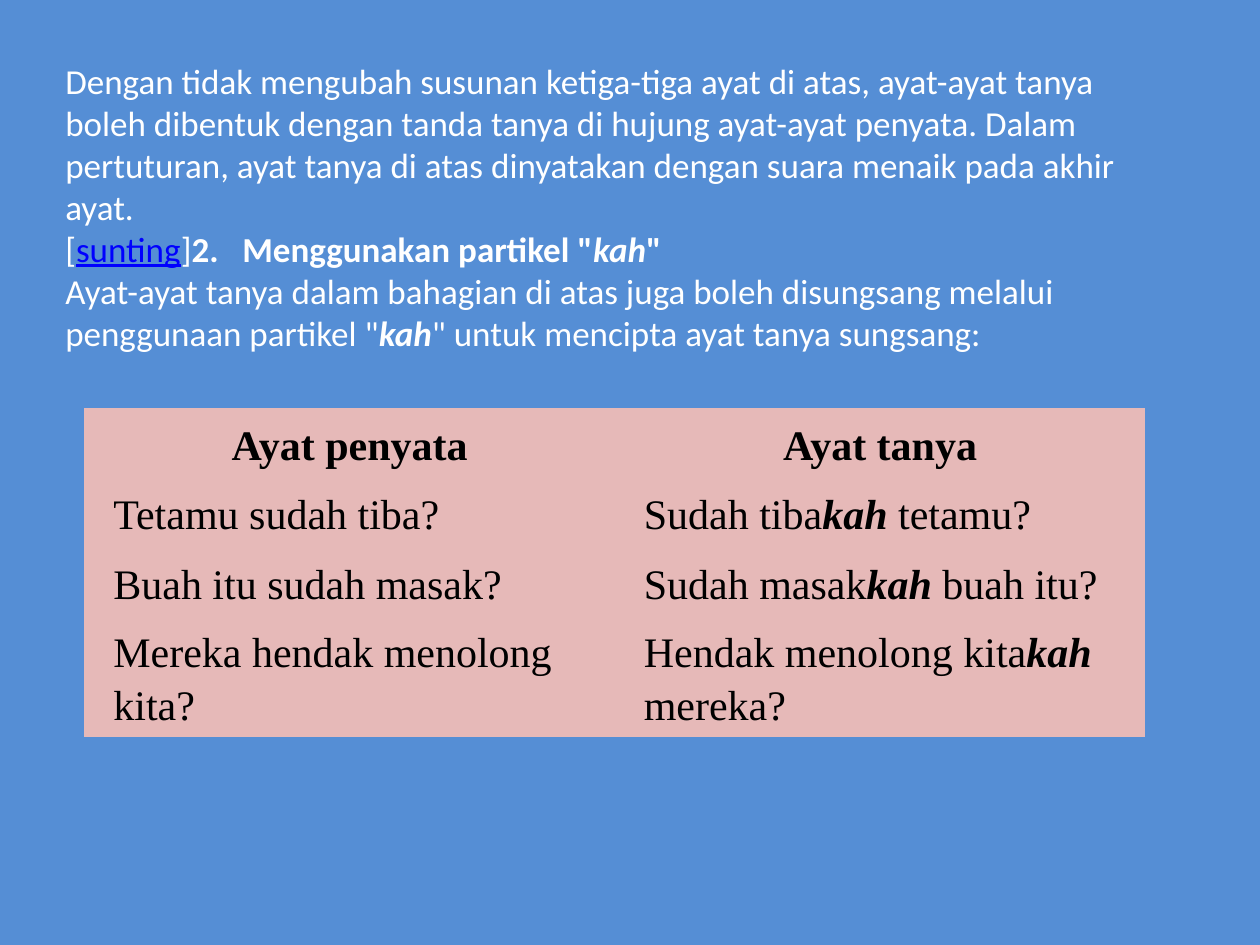
import pptx
import pptx.dml.color
import pptx.enum.text
import pptx.oxml.ns
import pptx.util

Inches = pptx.util.Inches
ALIGN = pptx.enum.text.PP_ALIGN

THEME = {
    "background": "558ED5",
    "body": {"font": "Calibri", "size": 20, "color": "FFFFFF"},
    "table": {"font": "Times New Roman", "size": 24, "color": "000000"},
    "link": "0000FF",
    "cell": "E6B9B8",
    "plain_table_style": "{2D5ABB26-0587-4C30-8999-92F81FD0307C}",
}

EXPLANATION = [
    [("Dengan tidak mengubah susunan ketiga-tiga ayat di atas, ayat-ayat tanya boleh dibentuk "
      "dengan tanda tanya di hujung ayat-ayat penyata. Dalam pertuturan, ayat tanya di atas "
      "dinyatakan dengan suara menaik pada akhir ayat.", "")],
    [("[", ""), ("sunting", "link"), ("]", ""),
     ("2.   Menggunakan partikel \"", "bold"), ("kah", "bold italic"), ("\"", "bold")],
    [("Ayat-ayat tanya dalam bahagian di atas juga boleh disungsang melalui penggunaan partikel \"", ""),
     ("kah", "bold italic"), ("\" untuk mencipta ayat tanya sungsang:", "")],
]

HEADINGS = ["Ayat penyata", "Ayat tanya"]
SENTENCES = [
    ("Tetamu sudah tiba?", "Sudah tiba", "tetamu?"),
    ("Buah itu sudah masak?", "Sudah masak", "buah itu?"),
    ("Mereka hendak menolong kita?", "Hendak menolong kita", "mereka?"),
]
PARTICLE = ("kah ", "bold italic")

TEXT_BOX = (0.42, 0.42, 8.83, 2.46)
TABLE_LEFT, TABLE_TOP = 0.67, 3.24
COLUMN_WIDTH, ROW_HEIGHT = 4.21, 0.55
HEADING_MARGINS = [(0.17, 0.02), (0.01, 0.01)]
SENTENCE_MARGINS = (0.23, 0.02)


def rgb(value):
    return pptx.dml.color.RGBColor.from_string(value)


def add_runs(paragraph, runs, style):
    for text, emphasis in runs:
        run = paragraph.add_run()
        run.text = text
        font = run.font
        font.name = style["font"]
        font.size = pptx.util.Pt(style["size"])
        font.bold = "bold" in emphasis
        font.italic = "italic" in emphasis
        font.underline = emphasis == "link"
        font.color.rgb = rgb(THEME["link"] if emphasis == "link" else style["color"])


def add_explanation(slide):
    frame = slide.shapes.add_textbox(*map(Inches, TEXT_BOX)).text_frame
    frame.word_wrap = True
    frame.auto_size = pptx.enum.text.MSO_AUTO_SIZE.SHAPE_TO_FIT_TEXT
    for index, runs in enumerate(EXPLANATION):
        paragraph = frame.add_paragraph() if index else frame.paragraphs[0]
        add_runs(paragraph, runs, THEME["body"])


def fill_cell(cell, runs, margins, alignment):
    cell.fill.solid()
    cell.fill.fore_color.rgb = rgb(THEME["cell"])
    cell.vertical_anchor = pptx.enum.text.MSO_ANCHOR.MIDDLE
    cell.margin_left = cell.margin_right = Inches(margins[0])
    cell.margin_top = cell.margin_bottom = Inches(margins[1])
    paragraph = cell.text_frame.paragraphs[0]
    paragraph.alignment = alignment
    paragraph.line_spacing = 1.15
    add_runs(paragraph, runs, THEME["table"])


def add_sentence_table(slide):
    row_count, column_count = len(SENTENCES) + 1, len(HEADINGS)
    shape = slide.shapes.add_table(
        row_count, column_count, Inches(TABLE_LEFT), Inches(TABLE_TOP),
        Inches(COLUMN_WIDTH * column_count), Inches(ROW_HEIGHT * row_count))
    table = shape.table
    table.horz_banding = False
    table.first_row = False
    for style_id in table._tbl.iter(pptx.oxml.ns.qn("a:tableStyleId")):
        style_id.text = THEME["plain_table_style"]
    for column, heading in enumerate(HEADINGS):
        fill_cell(table.cell(0, column), [(heading, "bold")], HEADING_MARGINS[column], ALIGN.CENTER)
    for row, (statement, opening, ending) in enumerate(SENTENCES, 1):
        question = [(opening, ""), PARTICLE, (ending, "")]
        for column, runs in enumerate([[(statement, "")], question]):
            fill_cell(table.cell(row, column), runs, SENTENCE_MARGINS, ALIGN.LEFT)


def main():
    presentation = pptx.Presentation()
    presentation.slide_width = Inches(10)
    presentation.slide_height = Inches(7.5)
    slide = presentation.slides.add_slide(presentation.slide_layouts[6])
    slide.background.fill.solid()
    slide.background.fill.fore_color.rgb = rgb(THEME["background"])
    add_explanation(slide)
    add_sentence_table(slide)
    presentation.save("out.pptx")


if __name__ == "__main__":
    main()
